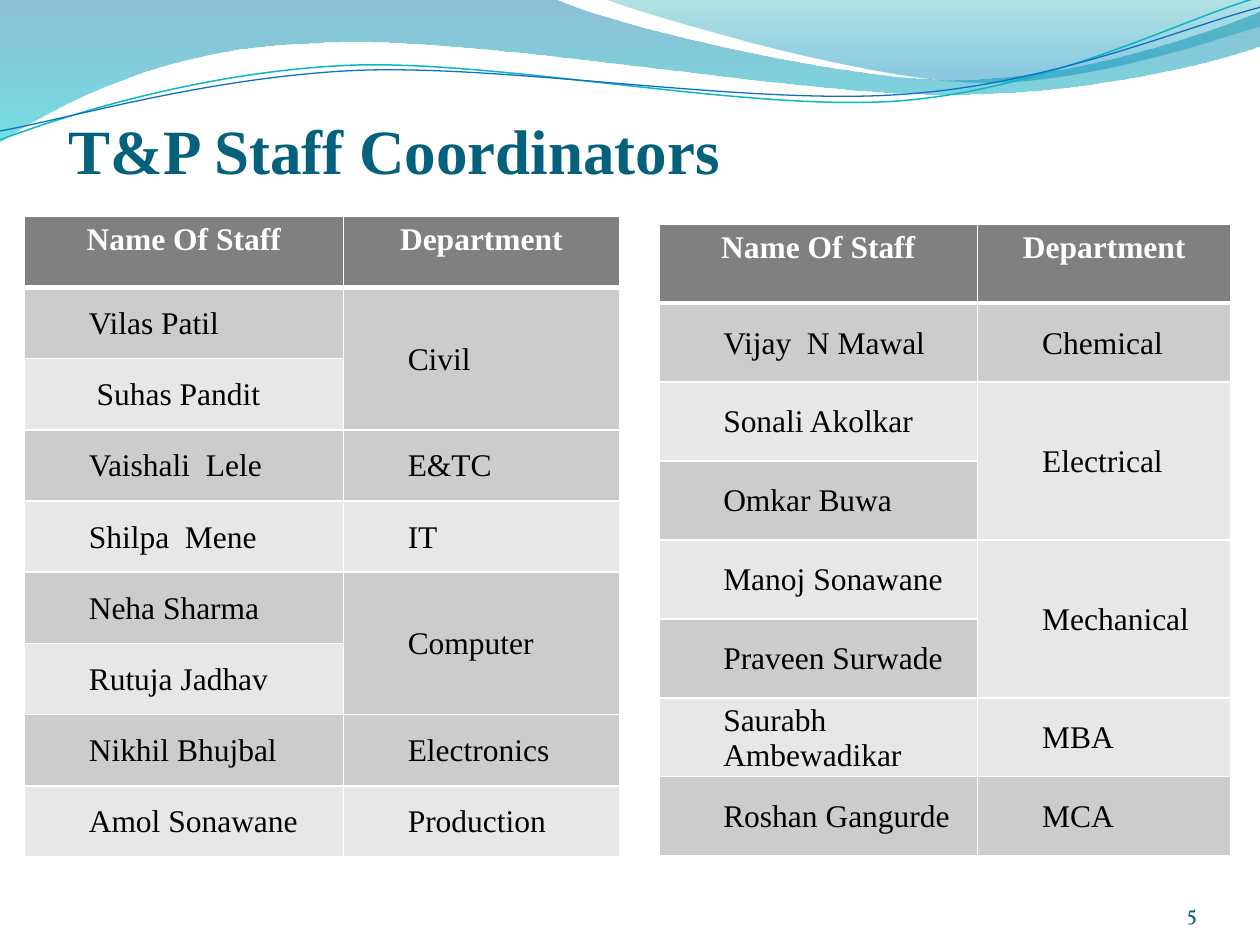
from lxml import etree
from pptx import Presentation
from pptx.dml.color import RGBColor
from pptx.enum.text import MSO_ANCHOR, PP_ALIGN
from pptx.oxml.ns import qn
from pptx.util import Cm, Pt

LEFT, CENTER, RIGHT, JUSTIFY = (PP_ALIGN.LEFT, PP_ALIGN.CENTER,
                                PP_ALIGN.RIGHT, PP_ALIGN.JUSTIFY)
MIDDLE, BOTTOM = MSO_ANCHOR.MIDDLE, MSO_ANCHOR.BOTTOM
SERIF, NUMBER_FONT = "Times New Roman", "Vollkorn"
CURVE_TILT = 357.3

COLORS = {
    "title": "04617B", "number": "045D75", "white": "FFFFFF", "black": "000000",
    "header": "808080", "dark_band": "CCCCCC", "light_band": "E7E7E7",
    "wave_blue": "0074A1", "wave_cyan": "00C6CF",
    "crest_teal": "00A1A9", "crest_blue": "008BBF",
    "teal_line": "0AB8BF", "blue_line": "0F6FC6",
}

# Outlines in cm: two numbers are a straight step, six are a Bezier curve
WAVE = [(0, 0), (11.18, -0.03),
        (12.09, 0.43, 16.87, 1.6, 19.25, 1.6),
        (21.67, 1.6, 24.33, 0.66, 25.4, 0.23), (25.43, 0.91),
        (24.97, 1.12, 22.1, 1.93, 18.95, 1.9),
        (15.8, 1.9, 9.7, 0.71, 6.53, 0.86),
        (3.28, 0.91, 1.17, 2.11, -0.03, 2.87), (0, 0)]
CREST = [(12.17, -0.03), (12.93, 0.28, 17.32, 1.57, 19.53, 1.65),
         (21.74, 1.75, 24.41, 0.81, 25.4, 0.53), (25.4, 0), (12.17, -0.03)]
TEAL_LINE = [(-0.05, 2.22), (1.19, 1.82, 4.02, 1.04, 7.05, 1.05),
             (10.05, 1.07, 15.02, 2.37, 18.08, 2.29),
             (21.13, 2.2, 23.87, 0.91, 25.41, 0.55)]
BLUE_LINE = [(-0.04, 2.04), (1.16, 1.9, 4.18, 1.15, 7.2, 1.16),
             (10.25, 1.18, 15.13, 2.25, 18.18, 2.16),
             (21.21, 2.1, 23.93, 1.06, 25.45, 0.75)]

# A department of None continues the one above
HEADER = ("Name Of Staff", "Department")
LEFT_STAFF = [("Vilas Patil", "Civil"), (" Suhas Pandit", None),
              ("Vaishali  Lele", "E&TC"), ("Shilpa  Mene", "IT"),
              ("Neha Sharma", "Computer"), ("Rutuja Jadhav", None),
              ("Nikhil Bhujbal", "Electronics"), ("Amol Sonawane", "Production")]
RIGHT_STAFF = [("Vijay  N Mawal", "Chemical"),
               ("Sonali Akolkar", "Electrical"), ("Omkar Buwa", None),
               ("Manoj Sonawane", "Mechanical"), ("Praveen Surwade", None),
               ("Saurabh Ambewadikar", "MBA"), ("Roshan Gangurde", "MCA")]


def rgb(name):
    return RGBColor.from_string(COLORS[name])


def add_outline(slide, outline, close):
    """Freeform whose six-number steps become Bezier curves."""
    start, *rest = [(Cm(step[i]), Cm(step[i + 1]))
                    for step in outline for i in range(0, len(step), 2)]
    builder = slide.shapes.build_freeform(*start)
    builder.add_line_segments(rest, close=close)
    sp = builder.convert_to_shape()
    sp.shadow.inherit = False
    lines = iter(list(sp._element.iter(qn("a:lnTo"))))
    for step in outline[1:]:
        first = next(lines)
        if len(step) == 6:
            first.addprevious(curve := etree.Element(qn("a:cubicBezTo")))
            for line in (first, next(lines), next(lines)):
                curve.append(line[0])
                line.getparent().remove(line)
    return sp


def add_wave(slide, outline, stops):
    """Filled wave; stops hold position, colour and opacity in percent."""
    sp = add_outline(slide, outline, True)
    sp.line.fill.background()
    sp.fill.gradient()
    sp.fill.gradient_angle = 270
    for stop, (position, color, _) in zip(sp.fill.gradient_stops, stops):
        stop.position = position
        stop.color.rgb = rgb(color)
    for clr, (_, _, opacity) in zip(sp._element.spPr.iter(qn("a:srgbClr")), stops):
        etree.SubElement(clr, qn("a:alpha")).set("val", str(opacity * 1000))


def add_curve(slide, outline, color, width):
    sp = add_outline(slide, outline, False)
    sp.rotation = CURVE_TILT
    sp.fill.background()
    sp.line.color.rgb = rgb(color)
    sp.line.width = Pt(width)


def write(tf, text, size, font, color, align, bold=False):
    tf.text = text
    p = tf.paragraphs[0]
    p.alignment = align
    for r in p.runs:
        r.font.size, r.font.name, r.font.bold = Pt(size), font, bold
        r.font.color.rgb = rgb(color)
    return p


def add_text(slide, box, margin_top, *style, **options):
    tf = slide.shapes.add_textbox(*map(Cm, box)).text_frame
    tf.word_wrap = True
    tf.vertical_anchor = BOTTOM
    tf.margin_left = tf.margin_right = tf.margin_bottom = 0
    tf.margin_top = Cm(margin_top)
    write(tf, *style, **options)


def set_borders(cell, top, bottom):
    """White borders, placed ahead of the fill as the schema asks."""
    tcPr = cell._tc.get_or_add_tcPr()
    for i, (side, width) in enumerate(zip("LRTB", (1, 1, top, bottom))):
        ln = etree.Element(qn(f"a:ln{side}"), w=str(Pt(width)))
        fill = etree.SubElement(ln, qn("a:solidFill"))
        etree.SubElement(fill, qn("a:srgbClr")).set("val", COLORS["white"])
        tcPr.insert(i, ln)


def format_cell(cell, text, row, align):
    if row == 0:
        fill = "header"
        write(cell.text_frame, text, 18, SERIF, "white", CENTER, bold=True)
    else:
        fill = "dark_band" if row % 2 else "light_band"
        cell.vertical_anchor = MIDDLE
        cell.margin_left = cell.margin_right = cell.margin_top = Cm(0.03)
        cell.margin_bottom = 0
        p = write(cell.text_frame, text, 18, SERIF, "black", align)
        p.level = 1
        pPr = p._p.get_or_add_pPr()
        pPr.set("marL", str(Cm(1.27)))
        pPr.set("indent", "0")
    cell.fill.solid()
    cell.fill.fore_color.rgb = rgb(fill)
    set_borders(cell, 3 if row == 1 else 1, 3 if row == 0 else 1)


def add_staff_table(slide, left, top, widths, height, staff, dept_align):
    rows = [HEADER] + staff
    table = slide.shapes.add_table(
        len(rows), len(widths), Cm(left), Cm(top),
        Cm(sum(widths)), Cm(height)).table
    for column, width in zip(table.columns, widths):
        column.width = Cm(width)
    for i, (name, dept) in enumerate(rows):
        table.rows[i].height = Cm(height / len(rows))
        format_cell(table.cell(i, 0), name, i, LEFT)
        format_cell(table.cell(i, 1), dept or "", i, dept_align)
        if dept is None:
            table.cell(i - 1, 1).merge(table.cell(i, 1))


def main():
    prs = Presentation()
    prs.slide_width, prs.slide_height = Cm(25.4), Cm(19.05)
    slide = prs.slides.add_slide(prs.slide_layouts[6])

    # Wave decoration
    add_wave(slide, WAVE, [(0, "wave_blue", 45), (1, "wave_cyan", 55)])
    add_wave(slide, CREST, [(0, "crest_teal", 30), (0.8, "crest_blue", 45)])
    add_curve(slide, TEAL_LINE, "teal_line", 0.85)
    add_curve(slide, BLUE_LINE, "blue_line", 0.75)

    # Slide number and title
    add_text(slide, (22.02, 17.65, 2.11, 1.02), 0,
             "5", 12, NUMBER_FONT, "number", RIGHT)
    add_text(slide, (1.39, 2.78, 21.16, 1), 0.13,
             "T&P Staff Coordinators", 36, SERIF, "title", LEFT, bold=True)

    # Staff tables
    add_staff_table(slide, 0.49, 4.36, (6.43, 5.57), 12.92, LEFT_STAFF, JUSTIFY)
    add_staff_table(slide, 13.28, 4.52, (6.43, 5.1), 12.73, RIGHT_STAFF, LEFT)

    prs.save("out.pptx")


if __name__ == "__main__":
    main()
